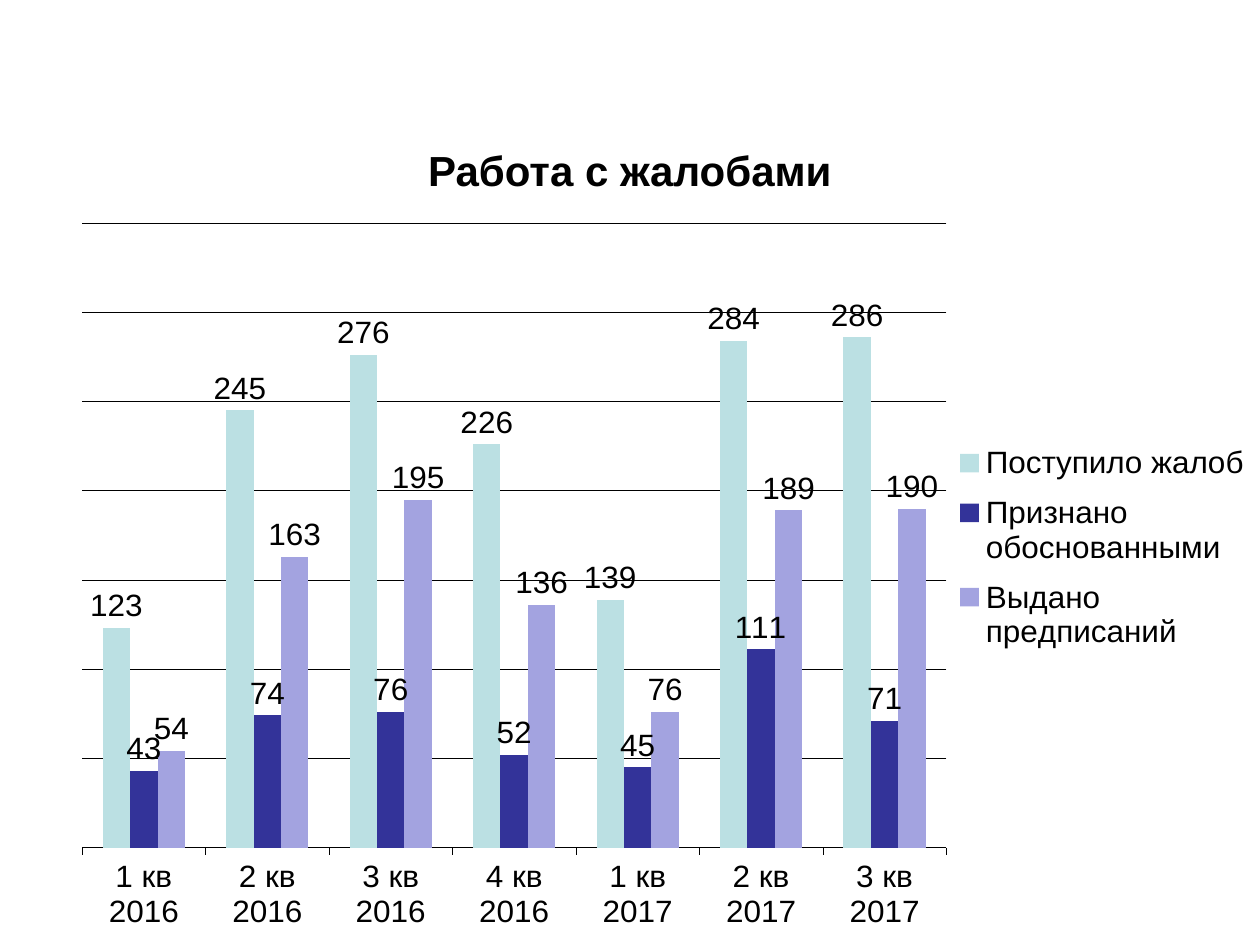
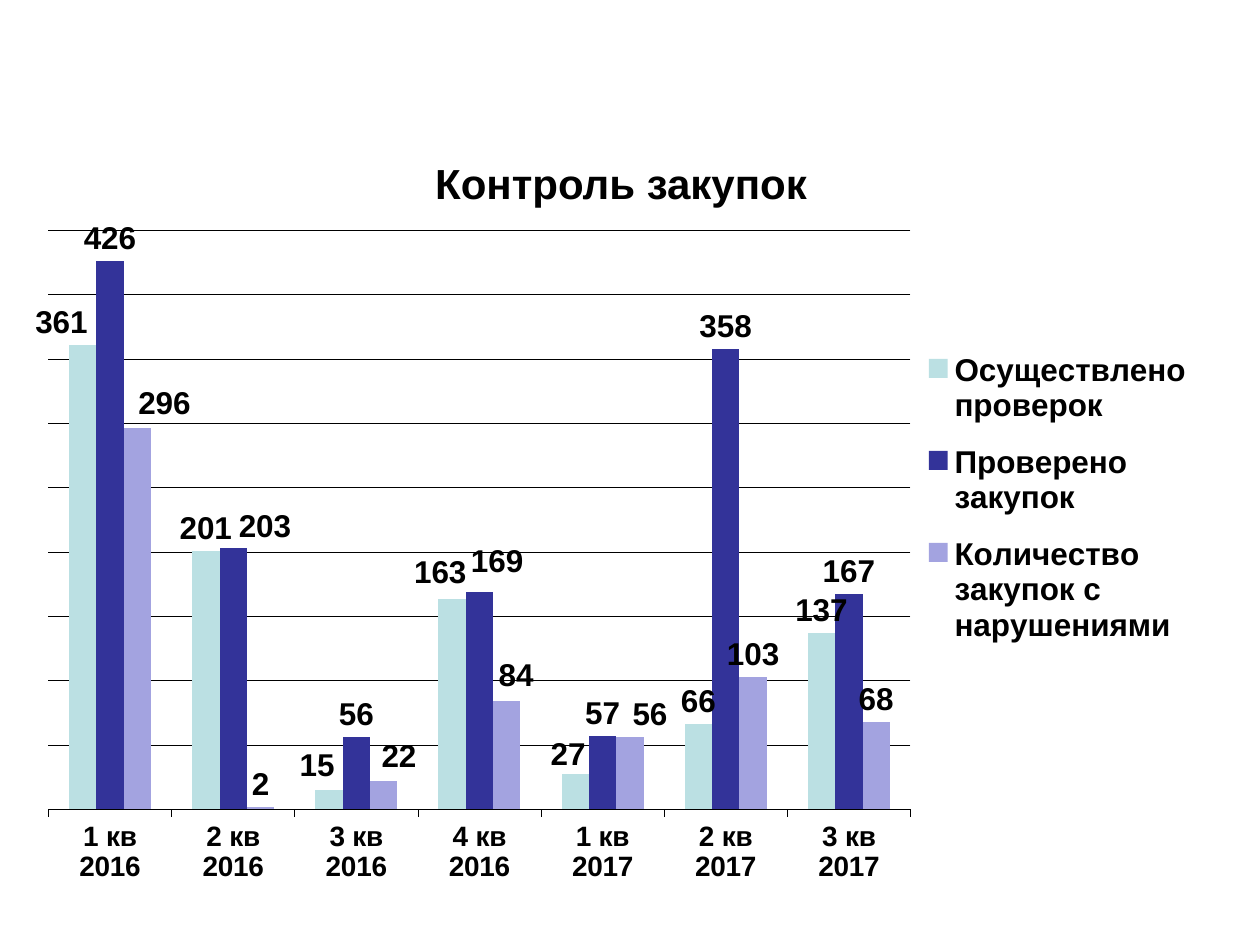
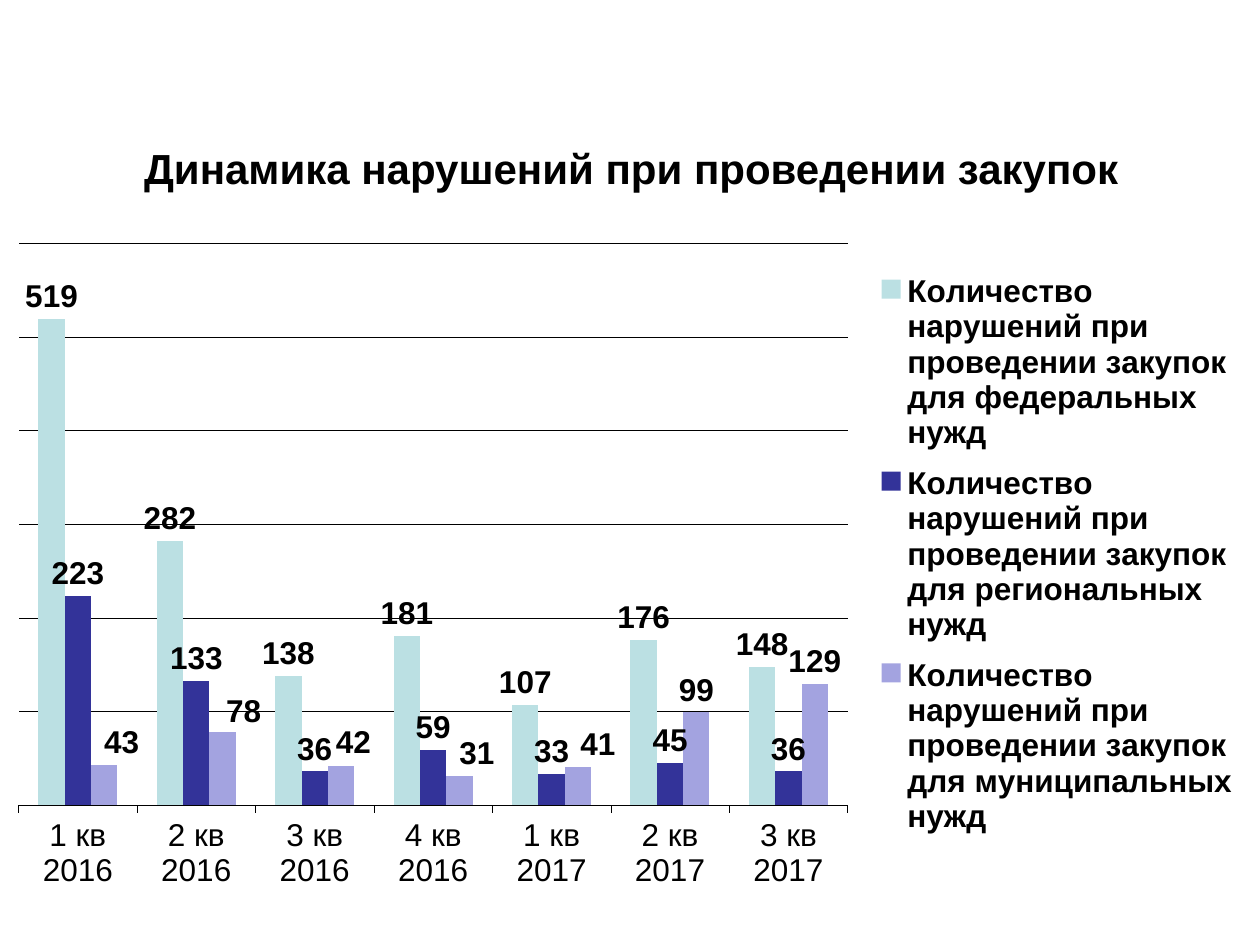
from lxml import etree
from pptx import Presentation
from pptx.chart.data import CategoryChartData
from pptx.dml.color import RGBColor
from pptx.enum.chart import XL_CHART_TYPE, XL_LABEL_POSITION, XL_LEGEND_POSITION, XL_TICK_MARK
from pptx.enum.text import MSO_ANCHOR, PP_ALIGN
from pptx.oxml.ns import qn
from pptx.util import Inches, Pt

CLUSTERED = XL_CHART_TYPE.COLUMN_CLUSTERED
OUTSIDE_END = XL_LABEL_POSITION.OUTSIDE_END
LEGEND_RIGHT = XL_LEGEND_POSITION.RIGHT
TICK_OUT, TICK_NONE = XL_TICK_MARK.OUTSIDE, XL_TICK_MARK.NONE
MIDDLE, CENTER = MSO_ANCHOR.MIDDLE, PP_ALIGN.CENTER

WIDTH, HEIGHT = Inches(10), Inches(7.5)
FONT = "Arial"
INK = "000000"
SERIES_COLORS = ["BBE0E3", "333399", "A3A3E0"]
QUARTERS = [f"{quarter} кв {year}" for year, last in ((2016, 4), (2017, 3))
            for quarter in range(1, last + 1)]

# All boxes are percentages: of the slide for "title" and "frame", of the frame for the rest.
SLIDES = [
    dict(
        title="Работа с жалобами",
        title_box=(5, 13.2, 90, 9.5),
        frame=(5, 21.6, 95, 76.7),
        plot=(1.6, 2.7, 72.2, 88.2),
        legend=(73.7, 32, 26.2, 33),
        scale=(350, 50),
        bold=False,
        quarter_style={},
        series={
            "Поступило жалоб": [123, 245, 276, 226, 139, 284, 286],
            "Признано обоснованными": [43, 74, 76, 52, 45, 111, 71],
            "Выдано предписаний": [54, 163, 195, 136, 76, 189, 190],
        },
        shifts=[{}, {}, {}],
    ),
    dict(
        title="Контроль закупок",
        title_box=(4.3, 14.3, 90, 10.1),
        frame=(2.8, 21.6, 93.8, 74.9),
        plot=(0.9, 3.7, 73.1, 81.8),
        legend=(74.2, 18, 24.5, 47),
        scale=(450, 50),
        bold=True,
        quarter_style=dict(size=16, bold=True),
        series={
            "Осуществлено проверок": [361, 201, 15, 163, 27, 66, 137],
            "Проверено закупок": [426, 203, 56, 169, 57, 358, 167],
            "Количество закупок с нарушениями": [296, 2, 22, 84, 56, 103, 68],
        },
        shifts=[
            {0: (-1.8, 0), 2: (-1, -0.2), 3: (-1, -0.7), 4: (-0.6, 0.4)},
            {1: (2.7, 0.1), 3: (1.5, -1.1)},
            {0: (2.3, -0.3), 2: (1.3, -0.2), 3: (0.8, -0.4), 4: (1.7, 0)},
        ],
    ),
    dict(
        title="Динамика нарушений при проведении закупок",
        title_box=(5.1, 13.2, 90, 9.1),
        frame=(0, 23.7, 98.8, 73.5),
        plot=(1.5, 2.8, 66.6, 80.9),
        legend=(70, 5, 29.8, 85),
        scale=(600, 100),
        bold=True,
        quarter_style={},
        series={
            f"Количество нарушений при проведении закупок для {level} нужд": values
            for level, values in (
                ("федеральных", [519, 282, 138, 181, 107, 176, 148]),
                ("региональных", [223, 133, 36, 59, 33, 45, 36]),
                ("муниципальных", [43, 78, 42, 31, 41, 99, 129]),
            )
        },
        shifts=[{}, {}, {0: (1.4, 0), 1: (1.7, 0.3), 2: (1, -0.2), 3: (1.4, 0), 4: (1.6, 0)}],
    ),
]


def rgb(color):
    return RGBColor.from_string(color)


def on_slide(box):
    left, top, width, height = (share / 100 for share in box)
    return int(left * WIDTH), int(top * HEIGHT), int(width * WIDTH), int(height * HEIGHT)


def style_font(font, size=18, bold=False, color=INK):
    font.name, font.size, font.bold = FONT, Pt(size), bold
    font.color.rgb = rgb(color)


def style_line(line):
    line.color.rgb = rgb(INK)
    line.width = Pt(0.25)


def add_text(slide, text, box, align=CENTER, **style):
    frame = slide.shapes.add_textbox(*on_slide(box)).text_frame
    frame.word_wrap = True
    frame.vertical_anchor = MIDDLE
    paragraph = frame.paragraphs[0]
    paragraph.alignment = align
    run = paragraph.add_run()
    run.text = text
    style_font(run.font, **style)


def set_layout(parent, position, settings):
    for old in parent.findall(qn("c:layout")):
        parent.remove(old)
    layout = etree.Element(qn("c:layout"))
    manual = etree.SubElement(layout, qn("c:manualLayout"))
    for tag, value in settings.items():
        etree.SubElement(manual, qn(f"c:{tag}")).set("val", str(value))
    parent.insert(position, layout)


def box_layout(box, **target):
    shares = (f"{share / 100:.3f}" for share in box)
    return {**target, "xMode": "edge", "yMode": "edge", **dict(zip("xywh", shares))}


def style_axes(chart, scale, quarter_style):
    quarters, counts = chart.category_axis, chart.value_axis
    quarters.major_tick_mark, quarters.minor_tick_mark = TICK_OUT, TICK_NONE
    style_line(quarters.format.line)
    style_font(quarters.tick_labels.font, **quarter_style)
    counts.minimum_scale = 0
    counts.maximum_scale, counts.major_unit = scale
    counts.has_major_gridlines = True
    style_line(counts.major_gridlines.format.line)
    counts.visible = False


def style_series(chart, shifts, bold):
    for number, series in enumerate(chart.plots[0].series):
        series.format.fill.solid()
        series.format.fill.fore_color.rgb = rgb(SERIES_COLORS[number])
        series.invert_if_negative = False
        labels = series.data_labels
        labels.show_value = True
        labels.position = OUTSIDE_END
        style_font(labels.font, bold=bold)
        for quarter, (across, down) in shifts[number].items():
            label = series.points[quarter].data_label
            label.position = OUTSIDE_END
            style_font(label.font, bold=bold)
            node = chart.element.xpath(
                f".//c:ser[{number + 1}]//c:dLbl[c:idx/@val='{quarter}']")[0]
            set_layout(node, 1, {"x": f"{across / 100:.3f}", "y": f"{down / 100:.3f}"})


def add_legend(chart, box, bold):
    chart.has_legend = True
    chart.legend.position = LEGEND_RIGHT
    chart.legend.include_in_layout = False
    style_font(chart.legend.font, bold=bold)
    set_layout(chart.element.xpath(".//c:legend")[0], 1, box_layout(box))


def add_quarter_chart(slide, frame, plot, legend, scale, bold, quarter_style, series, shifts):
    data = CategoryChartData()
    data.categories = QUARTERS
    for name, values in series.items():
        data.add_series(name, values)
    chart = slide.shapes.add_chart(CLUSTERED, *on_slide(frame), data).chart
    chart.has_title = False
    style_font(chart.font)
    chart.plots[0].gap_width = 150
    chart.plots[0].overlap = 0
    chart.plots[0].vary_by_categories = False
    style_axes(chart, scale, quarter_style)
    style_series(chart, shifts, bold)
    add_legend(chart, legend, bold)
    set_layout(chart.element.xpath(".//c:plotArea")[0], 0,
               box_layout(plot, layoutTarget="inner"))


def add_chart_slide(deck, title, title_box, **chart_parts):
    slide = deck.slides.add_slide(deck.slide_layouts[6])
    add_text(slide, title, title_box, size=24, bold=True)
    add_quarter_chart(slide, **chart_parts)


def main():
    deck = Presentation()
    deck.slide_width, deck.slide_height = WIDTH, HEIGHT
    for content in SLIDES:
        add_chart_slide(deck, **content)
    deck.save("out.pptx")


if __name__ == "__main__":
    main()
